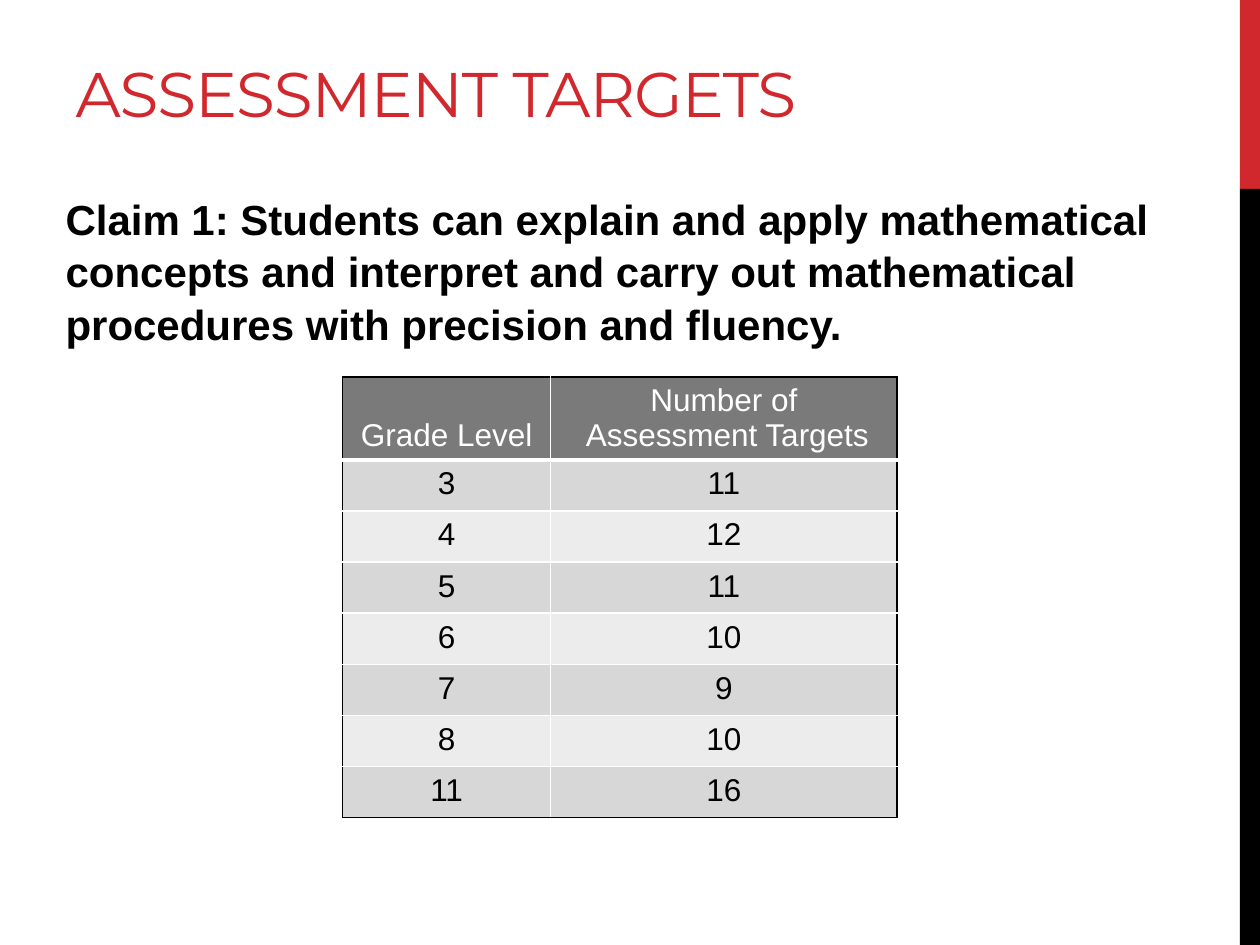
from lxml.etree import SubElement
from pptx import Presentation
from pptx.dml.color import RGBColor
from pptx.enum.shapes import MSO_SHAPE
from pptx.enum.text import MSO_ANCHOR, MSO_AUTO_SIZE, PP_ALIGN
from pptx.oxml.ns import qn
from pptx.util import Inches, Pt

RED = RGBColor(0xD1, 0x28, 0x2E)
BLACK = RGBColor(0x00, 0x00, 0x00)
WHITE = RGBColor(0xFF, 0xFF, 0xFF)
HEADER_GRAY = RGBColor(0x7A, 0x7A, 0x7A)
DARK_BAND = RGBColor(0xD7, 0xD7, 0xD7)
LIGHT_BAND = RGBColor(0xEC, 0xEC, 0xEC)

TITLE_FONT = {"name": "Montserrat", "size": Pt(36), "bold": False}
BODY_FONT = {"name": "Arial", "size": Pt(24), "bold": True}
CELL_FONT = {"name": "Arial", "size": Pt(18), "bold": False}

CLAIM = ("Claim 1: Students can explain and apply mathematical concepts and "
         "interpret and carry out mathematical procedures with precision and fluency.")
TARGETS = [
    ("Grade Level", "Number of\v Assessment Targets"),
    ("3", "11"),
    ("4", "12"),
    ("5", "11"),
    ("6", "10"),
    ("7", "9"),
    ("8", "10"),
    ("11", "16"),
]


def format_runs(p, font, color):
    for r in p.runs:
        for key, value in font.items():
            setattr(r.font, key, value)
        r.font.color.rgb = color


def fill_placeholder(sp, box, text, font, color, anchor):
    sp.left, sp.top, sp.width, sp.height = (Inches(v) for v in box)
    tf = sp.text_frame
    tf.text = text
    tf.word_wrap = True
    tf.auto_size = MSO_AUTO_SIZE.NONE
    tf.vertical_anchor = anchor
    p = tf.paragraphs[0]
    p.alignment = PP_ALIGN.LEFT
    format_runs(p, font, color)
    return p


def add_bar(s, top, height, color):
    sp = s.shapes.add_shape(MSO_SHAPE.RECTANGLE, Inches(9.84), Inches(top),
                            Inches(0.16), Inches(height))
    sp.shadow.inherit = False
    sp.fill.solid()
    sp.fill.fore_color.rgb = color
    sp.line.fill.background()


def set_border(cell, side, color, width):
    ln = SubElement(cell._tc.get_or_add_tcPr(), qn(f"a:{side}"), w=str(Pt(width)))
    fill = SubElement(ln, qn("a:solidFill"))
    SubElement(fill, qn("a:srgbClr"), val=str(color))


def format_cell(cell, text, fill, color, borders):
    # Borders come before the fill in the cell properties
    for side, (line_color, width) in borders.items():
        set_border(cell, side, line_color, width)
    cell.fill.solid()
    cell.fill.fore_color.rgb = fill
    cell.text = text
    p = cell.text_frame.paragraphs[0]
    p.alignment = PP_ALIGN.CENTER
    format_runs(p, CELL_FONT, color)


def add_targets_table(s):
    last = len(TARGETS) - 1
    header_height, row_height = Inches(0.66), Inches(2.84) // last
    table = s.shapes.add_table(len(TARGETS), 2, Inches(2.72), Inches(2.99), Inches(4.4),
                               header_height + last * row_height).table
    for col, width in zip(table.columns, (1.65, 2.75)):
        col.width = Inches(width)
    for i, row in enumerate(TARGETS):
        header = i == 0
        table.rows[i].height = header_height if header else row_height
        band = HEADER_GRAY if header else DARK_BAND if i % 2 else LIGHT_BAND
        for j, text in enumerate(row):
            # Black outline, white inner lines
            borders = {
                "lnL": (WHITE if j else BLACK, 1),
                "lnR": (BLACK if j else WHITE, 1),
                "lnT": (BLACK if header else WHITE, 1),
                "lnB": (BLACK if i == last else WHITE, 3 if header else 1),
            }
            format_cell(table.cell(i, j), text, band, WHITE if header else BLACK, borders)
    table.cell(0, 0).vertical_anchor = MSO_ANCHOR.BOTTOM


def main():
    prs = Presentation()
    prs.slide_width, prs.slide_height = Inches(10), Inches(7.5)
    s = prs.slides.add_slide(prs.slide_layouts[1])

    # Side bars
    add_bar(s, 0, 1.5, RED)
    add_bar(s, 1.5, 6, BLACK)

    # Title
    p = fill_placeholder(s.shapes.title, (0.5, 0.17, 6.9, 0.91), "ASSESSMENT TARGETS",
                         TITLE_FONT, RED, MSO_ANCHOR.BOTTOM)
    p.runs[0].font._element.set("spc", "-60")

    # Claim, without bullet
    p = fill_placeholder(s.placeholders[1], (0.42, 1.47, 9.17, 1.67), CLAIM,
                         BODY_FONT, BLACK, MSO_ANCHOR.TOP)
    p.line_spacing, p.space_before, p.space_after = 1.04, Pt(2), Pt(6)
    pPr = p._p.get_or_add_pPr()
    pPr.set("marL", "0")
    pPr.set("indent", "0")
    SubElement(pPr, qn("a:buNone"))

    # Targets by grade
    add_targets_table(s)
    prs.save("out.pptx")


if __name__ == "__main__":
    main()
